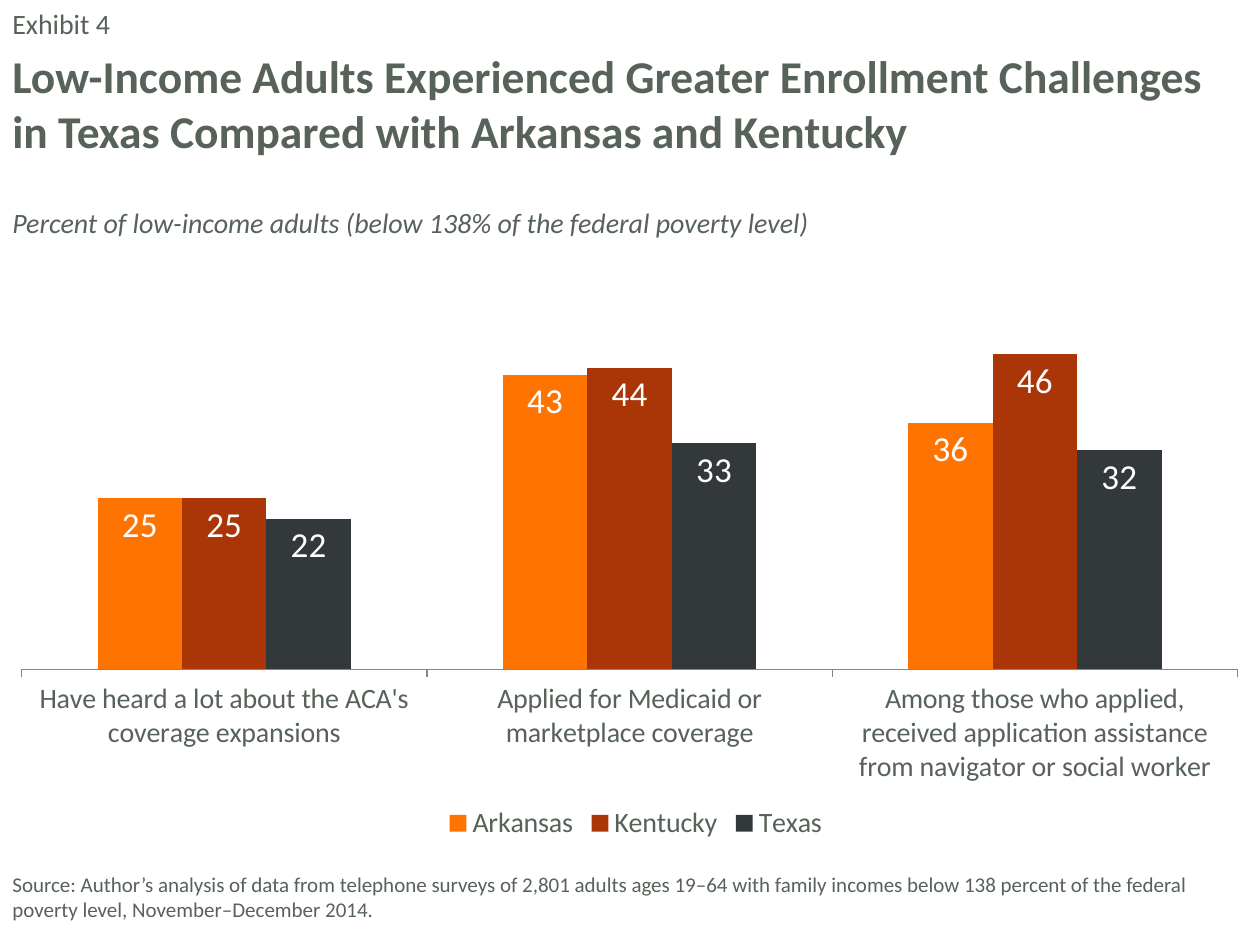
from dataclasses import dataclass

from lxml import etree
from pptx import Presentation
from pptx import util as u
from pptx.chart.data import CategoryChartData
from pptx.dml.color import RGBColor
from pptx.enum import chart as charts, text

EMU_PER_PX = 914400 / 126


@dataclass(frozen=True)
class Theme:
    font: str = "Calibri"
    ink: str = "576258"
    axis: str = "868686"
    label: str = "FFFFFF"
    title_size: int = 26
    value_size: int = 20
    body_size: int = 16
    source_size: int = 12


THEME = Theme()

CATEGORIES = [
    "Have heard a lot about the ACA's coverage expansions",
    "Applied for Medicaid or marketplace coverage",
    "Among those who applied, received application assistance "
    "from navigator or social worker",
]
# State, percentages, bar colour, label number format
STATES = [
    ("Arkansas", (25, 43, 36), "FF7300", "0"),
    ("Kentucky", (25, 44, 46), "AA3607", r"#,##0;\(#,##0\)"),
    ("Texas", (22, 33, 32), "33383B", "0"),
]


def px(length):
    return u.Emu(round(length * EMU_PER_PX))


def set_font(font, size, color=THEME.ink, **style):
    values = {"name": THEME.font, "size": u.Pt(size), **style}
    for name, value in values.items():
        setattr(font, name, value)
    font.color.rgb = RGBColor.from_string(color)


def add_text(slide, box, wording, size, anchor=text.MSO_ANCHOR.TOP, **style):
    frame = slide.shapes.add_textbox(*map(px, box)).text_frame
    frame.word_wrap = True
    frame.vertical_anchor = anchor
    run = frame.paragraphs[0].add_run()
    run.text = wording
    set_font(run.font, size, **style)


def add_heading(slide, box):
    left, top, width, height = box
    add_text(slide, (left, top, width, 42), "Exhibit 4", THEME.body_size)
    add_text(slide, (left, top + 42, width, 126),
             "Low-Income Adults Experienced Greater Enrollment Challenges "
             "in Texas Compared with Arkansas and Kentucky",
             THEME.title_size, bold=True)
    add_text(slide, (left, top + height - 47, 935, 47),
             "Percent of low-income adults (below 138% of the federal poverty level)",
             THEME.body_size, italic=True)


def set_plot_layout(chart, **fractions):
    """Fix the inner plot area as fractions of the chart frame."""
    plot_area = chart.plots[0]._element.getparent()
    namespace = etree.QName(plot_area).namespace

    def add(parent, tag, value=None):
        child = etree.SubElement(parent, f"{{{namespace}}}{tag}")
        if value is not None:
            child.set("val", str(value))
        return child

    for layout in plot_area.findall(f"{{{namespace}}}layout"):
        plot_area.remove(layout)
    layout = add(plot_area, "layout")
    plot_area.insert(0, layout)
    manual = add(layout, "manualLayout")
    add(manual, "layoutTarget", "inner")
    for side in "xy":
        add(manual, f"{side}Mode", "edge")
    for name, value in fractions.items():
        add(manual, name, value)


def style_axes(chart):
    category_axis = chart.category_axis
    set_font(category_axis.tick_labels.font, THEME.body_size)
    category_axis.major_tick_mark = charts.XL_TICK_MARK.OUTSIDE
    category_axis.format.line.color.rgb = RGBColor.from_string(THEME.axis)
    category_axis.format.line.width = u.Pt(0.75)
    settings = {"minimum_scale": 0, "maximum_scale": 60, "major_unit": 10,
                "has_major_gridlines": False, "visible": False}
    for name, value in settings.items():
        setattr(chart.value_axis, name, value)


def style_series(series, color, number_format):
    series.format.fill.solid()
    series.format.fill.fore_color.rgb = RGBColor.from_string(color)
    labels = series.data_labels
    settings = {"show_value": True, "number_format": number_format,
                "number_format_is_linked": False,
                "position": charts.XL_LABEL_POSITION.INSIDE_END}
    for name, value in settings.items():
        setattr(labels, name, value)
    set_font(labels.font, THEME.value_size, THEME.label)


def add_state_chart(slide, box):
    data = CategoryChartData(number_format="0")
    data.categories = CATEGORIES
    for name, values, _, _ in STATES:
        data.add_series(name, values)
    chart = slide.shapes.add_chart(
        charts.XL_CHART_TYPE.COLUMN_CLUSTERED, *map(px, box), data).chart
    set_font(chart.font, THEME.body_size)
    chart.has_title = False
    chart.has_legend = True
    chart.legend.position = charts.XL_LEGEND_POSITION.BOTTOM
    chart.legend.include_in_layout = True
    set_font(chart.legend.font, THEME.body_size)
    plot = chart.plots[0]
    plot.gap_width = 180
    plot.overlap = 0
    plot.vary_by_categories = False
    set_plot_layout(chart, x=0, y=0, w=0.99, h=0.7)
    style_axes(chart)
    for series, (_, _, color, number_format) in zip(plot.series, STATES):
        style_series(series, color, number_format)


def add_source(slide, box):
    add_text(slide, box,
             "Source: Author’s analysis of data from telephone surveys of 2,801 adults "
             "ages 19–64 with family incomes below 138 percent of the federal poverty "
             "level, November–December 2014.",
             THEME.source_size, text.MSO_ANCHOR.BOTTOM)


def main():
    presentation = Presentation()
    presentation.slide_width, presentation.slide_height = px(1260), px(945)
    slide = presentation.slides.add_slide(presentation.slide_layouts[6])
    add_state_chart(slide, (21, 258, 1229, 588))
    add_heading(slide, (0, 0, 1260, 246))
    add_source(slide, (0, 844, 1239, 84))
    presentation.save("out.pptx")


if __name__ == "__main__":
    main()
